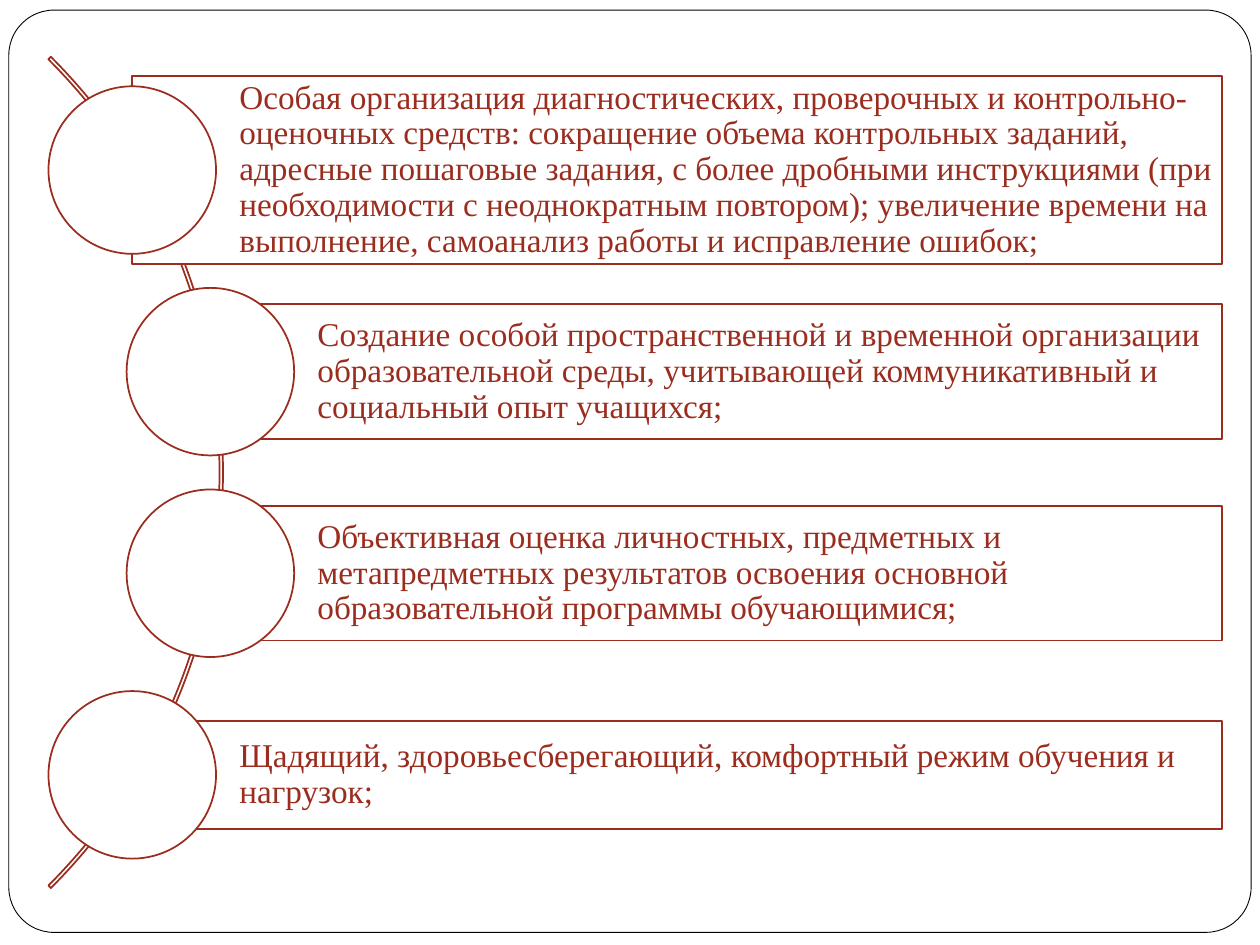
"""Build a slide with four requirements strung along a curved arc."""
from dataclasses import dataclass

from pptx import Presentation
from pptx.dml.color import RGBColor
from pptx.enum.shapes import MSO_SHAPE
from pptx.enum.text import MSO_ANCHOR, PP_ALIGN
from pptx.util import Inches, Pt


@dataclass(frozen=True)
class Theme:
    paper: RGBColor = RGBColor(0xFF, 0xFF, 0xFF)
    frame: RGBColor = RGBColor(0, 0, 0)
    accent: RGBColor = RGBColor(0x9B, 0x2D, 0x1F)
    font: str = "Times New Roman"
    size: float = 19


THEME = Theme()
OUTER, INNER = 1.05, 1.67
ITEMS = [
    (OUTER, 1.49, "Особая организация диагностических, проверочных и контрольно-оценочных средств: "
     "сокращение объема контрольных заданий, адресные пошаговые задания, с более дробными "
     "инструкциями (при необходимости с неоднократным повтором); увеличение времени на "
     "выполнение, самоанализ работы и исправление ошибок;"),
    (INNER, 1.07, "Создание особой пространственной и временной организации образовательной среды, "
     "учитывающей коммуникативный и социальный опыт учащихся;"),
    (INNER, 1.07, "Объективная оценка личностных, предметных и метапредметных результатов освоения "
     "основной образовательной программы обучающимися;"),
    (OUTER, 0.86, "Щадящий, здоровьесберегающий, комфортный режим обучения и нагрузок;"),
]
FIRST_ROW, ROW_STEP = 1.35, 1.6
RIGHT_EDGE = 9.7
CIRCLE = 1.33
ARC = 9.33


def add_outline(s, kind, x, y, w, h, color=THEME.accent, width=1.0, adjust=()):
    sp = s.shapes.add_shape(kind, Inches(x), Inches(y), Inches(w), Inches(h))
    sp.shadow.inherit = False
    sp.fill.solid()
    sp.fill.fore_color.rgb = THEME.paper
    sp.line.color.rgb = color
    sp.line.width = Pt(width)
    for i, value in enumerate(adjust):
        sp.adjustments[i] = value
    return sp


def write_text(sp, text):
    tf = sp.text_frame
    tf.word_wrap = True
    tf.vertical_anchor = MSO_ANCHOR.MIDDLE
    tf.margin_left = Inches(0.85)
    tf.margin_right = tf.margin_top = tf.margin_bottom = Inches(0.05)
    tf.text = text
    p = tf.paragraphs[0]
    p.alignment = PP_ALIGN.LEFT
    p.line_spacing = 0.9
    font = p.runs[0].font
    font.name, font.size = THEME.font, Pt(THEME.size)
    font.color.rgb = THEME.accent


def main():
    prs = Presentation()
    prs.slide_width, prs.slide_height = Inches(10), Inches(7.5)
    s = prs.slides.add_slide(prs.slide_layouts[6])
    add_outline(s, MSO_SHAPE.ROUNDED_RECTANGLE, 0.07, 0.08, 9.86, 7.32,
                THEME.frame, 0.5, [0.049])
    middle = FIRST_ROW + ROW_STEP * (len(ITEMS) - 1) / 2
    add_outline(s, MSO_SHAPE.BLOCK_ARC, -7.56, middle - ARC / 2, ARC, ARC,
                adjust=[189, 27, 0.003])
    for row, (x, height, text) in enumerate(ITEMS):
        y = FIRST_ROW + row * ROW_STEP
        box = add_outline(s, MSO_SHAPE.RECTANGLE, x, y - height / 2, RIGHT_EDGE - x, height)
        write_text(box, text)
        add_outline(s, MSO_SHAPE.OVAL, x - CIRCLE / 2, y - CIRCLE / 2, CIRCLE, CIRCLE)
    prs.save("out.pptx")


if __name__ == "__main__":
    main()
